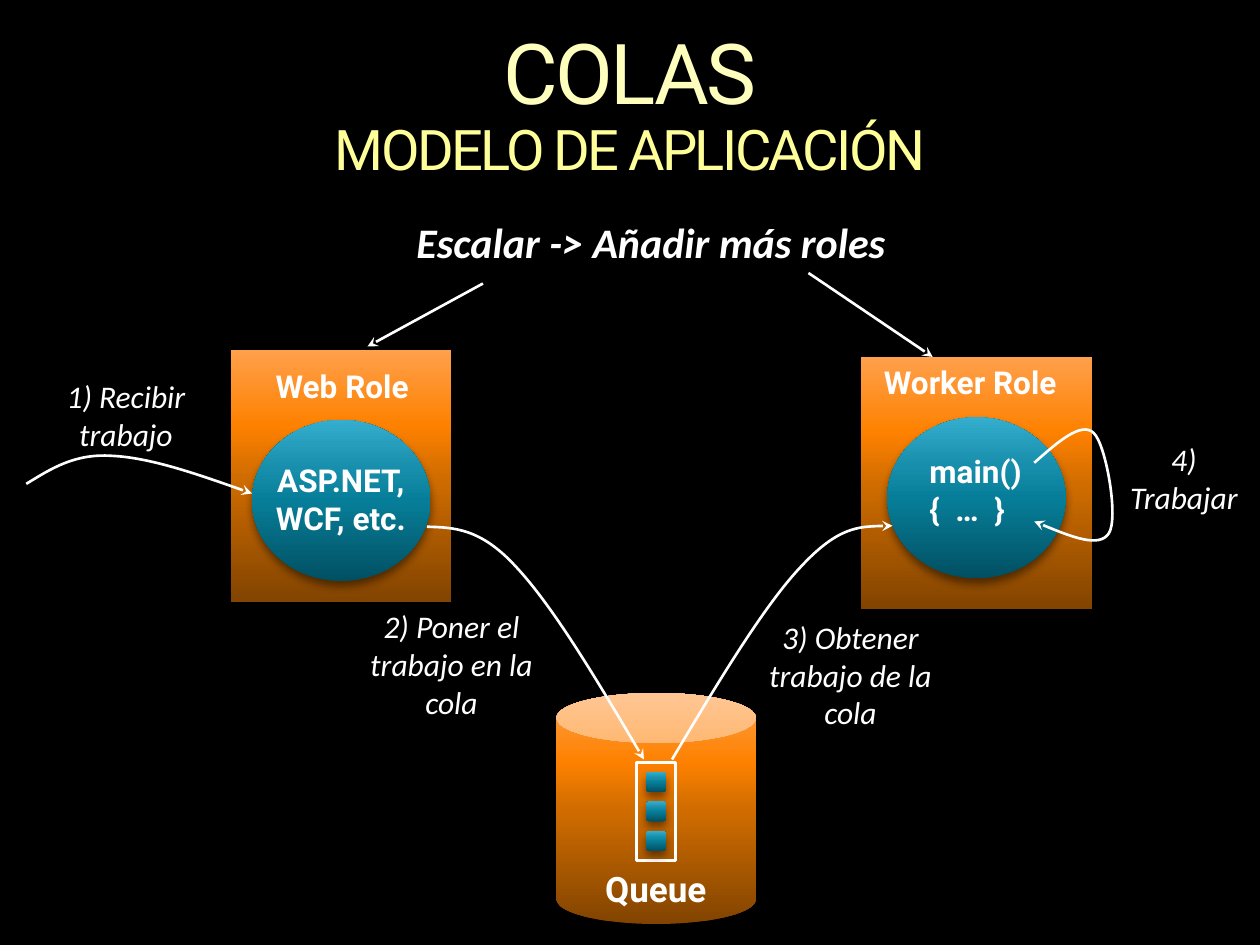
from lxml import etree
from pptx import Presentation
from pptx.dml.color import RGBColor
from pptx.enum.shapes import MSO_CONNECTOR, MSO_SHAPE
from pptx.enum.text import MSO_ANCHOR, MSO_AUTO_SIZE, PP_ALIGN
from pptx.oxml.ns import qn
from pptx.util import Pt

RECT, OVAL = MSO_SHAPE.RECTANGLE, MSO_SHAPE.OVAL
ROUNDED, CAN = MSO_SHAPE.ROUNDED_RECTANGLE, MSO_SHAPE.CAN
STRAIGHT = MSO_CONNECTOR.STRAIGHT
LEFT, CENTER = PP_ALIGN.LEFT, PP_ALIGN.CENTER
TOP = MSO_ANCHOR.TOP
GROW = MSO_AUTO_SIZE.SHAPE_TO_FIT_TEXT

WHITE = "FFFFFF"
ORANGE = [(0, "824400"), (50, "D16D00"), (70, "FE8100"), (100, "FFA04B")]
TEAL = [(0, "015062"), (50, "077E99"), (70, "178EAB"), (100, "35ADCE")]


def rgb(value):
    return RGBColor.from_string(value)


def pts(values):
    return [Pt(v) for v in values]


def child(parent, tag, **attrs):
    return etree.SubElement(parent, qn(tag), {k: str(v) for k, v in attrs.items()})


def add_solid(shapes, kind, box, stops):
    """Add a borderless shape with an upward gradient and a soft shadow."""
    sp = shapes.add_shape(kind, *pts(box))
    sp.line.fill.background()
    sp.fill.gradient()
    sp.fill.gradient_angle = 90
    stop_list = sp._element.spPr.find(".//" + qn("a:gsLst"))
    stop_list.clear()
    for pos, color in stops:
        child(child(stop_list, "a:gs", pos=pos * 1000), "a:srgbClr", val=color)

    sp.shadow.inherit = False
    effects = sp._element.spPr.find(qn("a:effectLst"))
    shadow = child(effects, "a:outerShdw", blurRad=Pt(5), dist=Pt(3),
                   dir=90 * 60000, rotWithShape=0)
    child(child(shadow, "a:srgbClr", val="000000"), "a:alpha", val=45000)


def add_text(shapes, box, text, font="Roboto", size=18, bold=False,
             italic=False, align=CENTER, wrap=True):
    tf = shapes.add_textbox(*pts(box)).text_frame
    tf.word_wrap = wrap
    tf.auto_size = GROW
    tf.text = text
    for p in tf.paragraphs:
        p.alignment = align
        p.font.name = font
        p.font.size = Pt(size)
        p.font.bold = bold
        p.font.italic = italic
        p.font.color.rgb = rgb(WHITE)


def style_line(sp, arrow=True):
    sp.line.color.rgb = rgb(WHITE)
    sp.line.width = Pt(1.5)
    if arrow:
        child(sp.line._get_or_add_ln(), "a:tailEnd", type="stealth")


def add_curve(shapes, points):
    """Draw an arrow through cubic Bézier points: start, then three per segment."""
    start, *rest = [pts(point) for point in points]
    builder = shapes.build_freeform(*start)
    builder.add_line_segments(rest, close=False)
    sp = builder.convert_to_shape()
    path = sp._element.find(".//" + qn("a:path"))
    segments = path.findall(qn("a:lnTo"))
    for i in range(0, len(segments), 3):
        curve = child(path, "a:cubicBezTo")
        for segment in segments[i:i + 3]:
            curve.append(segment[0])
            path.remove(segment)
    sp.fill.background()
    sp.shadow.inherit = False
    style_line(sp)


def add_arrow(shapes, start, end):
    line = shapes.add_connector(STRAIGHT, *pts(start + end))
    style_line(line)
    child(line._element.spPr, "a:effectLst")


def add_title(s):
    title = s.shapes.title
    title.left, title.top, title.width, title.height = pts((30, 18, 660, 87))
    tf = title.text_frame
    tf.margin_left = tf.margin_right = tf.margin_top = tf.margin_bottom = 0
    tf.vertical_anchor = TOP
    tf.word_wrap = True
    tf.auto_size = GROW
    p = tf.paragraphs[0]
    p.alignment = CENTER
    p.line_spacing = 0.9
    p.font.name = "Roboto"
    lines = [("COLAS", 48, "FFFFBD"), ("MODELO DE APLICACIÓN", 32, "FFFF99")]
    for i, (text, size, color) in enumerate(lines):
        if i:
            p.add_line_break()
        r = p.add_run()
        r.text = text
        r.font.size = Pt(size)
        r.font.color.rgb = rgb(color)
        r.font._element.set("spc", "-150")


def add_queue(s):
    shapes = s.shapes.add_group_shape().shapes
    add_solid(shapes, CAN, (318, 396, 114, 132), ORANGE)
    add_text(shapes, (324, 492, 101.5, 31.5), "Queue", size=20, bold=True)
    tray = shapes.add_shape(RECT, *pts((363.6, 435.6, 22.5, 56)))
    tray.fill.background()
    tray.shadow.inherit = False
    style_line(tray, arrow=False)
    for i in range(3):
        add_solid(shapes, ROUNDED, (369.2, 441.2 + 16.8 * i, 11.5, 11.5), TEAL)


def add_role(s, box, name, name_box, oval_at, code, code_box,
             align=CENTER, wrap=True):
    shapes = s.shapes.add_group_shape().shapes
    add_solid(shapes, RECT, box, ORANGE)
    add_text(shapes, name_box, name, bold=True, align=align, wrap=wrap)
    add_solid(shapes, OVAL, oval_at + (102, 92), TEAL)
    add_text(shapes, code_box, code, bold=True, align=align)


def add_step(s, text, box, curve):
    shapes = s.shapes.add_group_shape().shapes
    add_curve(shapes, curve)
    add_text(shapes, box, text, font="Calibri", italic=True)


def add_scaling(s):
    shapes = s.shapes.add_group_shape().shapes
    add_text(shapes, (186, 120, 372, 36), "Escalar -> Añadir más roles",
             font="Calibri", size=24, bold=True, italic=True)
    add_arrow(shapes, (276, 162), (210, 198))
    add_arrow(shapes, (462, 156), (533, 204))


def main():
    prs = Presentation()
    prs.slide_width, prs.slide_height = Pt(720), Pt(540)
    s = prs.slides.add_slide(prs.slide_layouts[5])
    s.background.fill.solid()
    s.background.fill.fore_color.rgb = rgb("000000")

    add_title(s)
    add_queue(s)
    add_role(s, (132, 200, 126, 144), "Web Role", (144, 206, 103, 29),
             (144, 240), "ASP.NET, WCF, etc.", (144, 260, 101.5, 51))
    add_role(s, (492, 204, 132, 144), "Worker Role", (498, 204, 121, 29),
             (507, 238.5), "main()\n{  …  }", (524, 255, 75.5, 51),
             align=LEFT, wrap=False)

    add_step(s, "1) Recibir trabajo", (18, 212, 108, 51),
             [(15, 276.5), (29, 268), (42.5, 259), (64, 260.5),
              (85.5, 261.5), (114.5, 271.5), (144, 282)])
    add_step(s, "2) Poner el trabajo en la cola", (204, 343.5, 108, 73),
             [(244, 301), (259, 301.5), (274.5, 301.5), (295, 324),
              (316, 346.5), (342, 390), (368, 434)])
    add_step(s, "3) Obtener trabajo de la cola", (432, 349.5, 108, 73),
             [(384, 434), (410.5, 389.5), (437, 345.5), (458, 323.5),
              (479, 301), (494.5, 300.5), (510, 300.5)])
    add_step(s, "4)\nTrabajar", (633, 248, 87, 51),
             [(591, 264.5), (604, 253), (618, 240.5), (625, 247.5),
              (632, 254), (639.5, 296.5), (633.5, 305),
              (628, 313), (610, 306), (591, 298)])
    add_scaling(s)
    prs.save("out.pptx")


if __name__ == "__main__":
    main()
